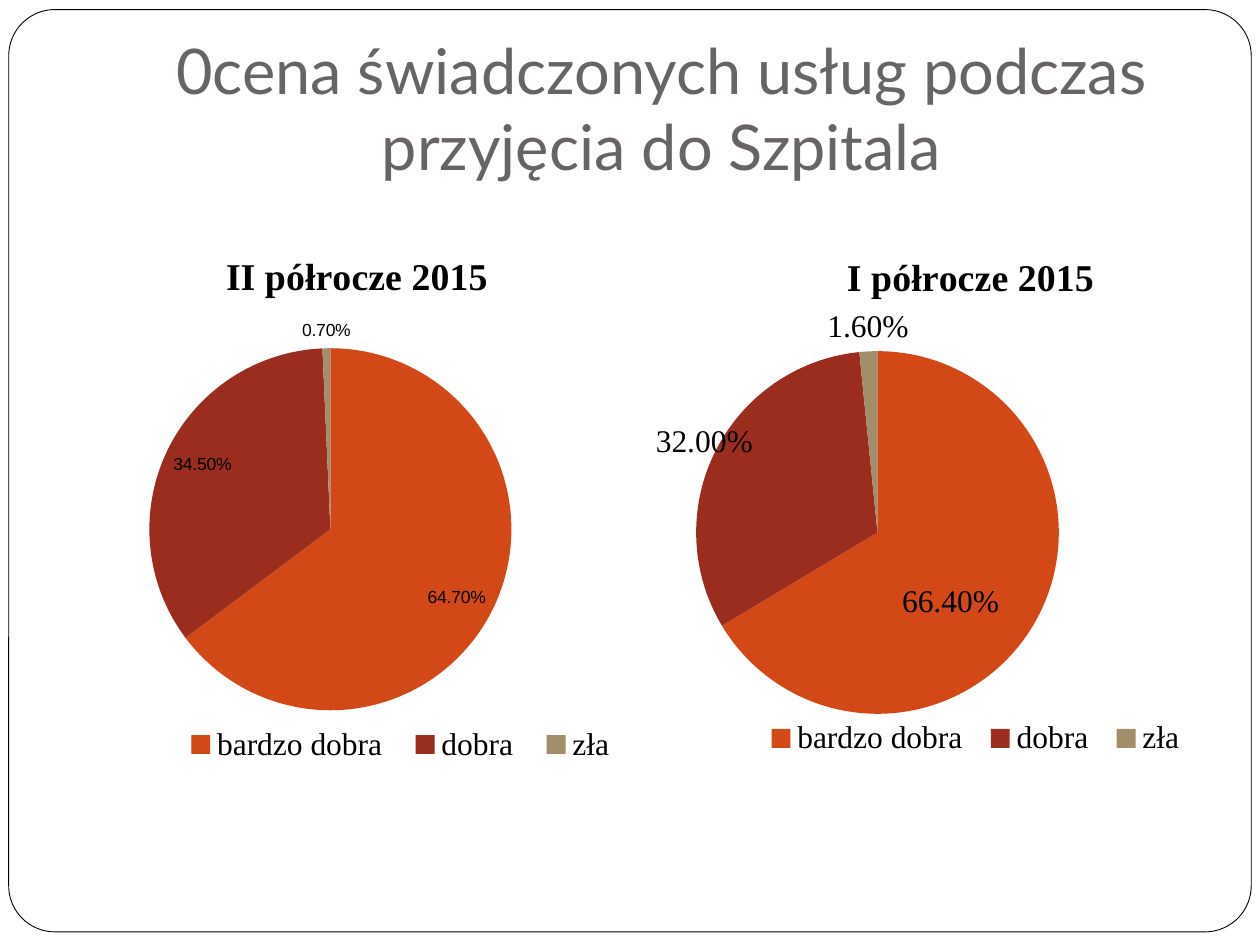
from dataclasses import dataclass

from pptx import Presentation
from pptx.chart.data import CategoryChartData
from pptx.dml.color import RGBColor
from pptx.enum.chart import XL_CHART_TYPE, XL_LABEL_POSITION, XL_LEGEND_POSITION
from pptx.enum.shapes import MSO_SHAPE
from pptx.enum.text import MSO_ANCHOR, PP_ALIGN
from pptx.oxml import parse_xml
from pptx.oxml.ns import nsdecls
from pptx.util import Pt

PIE = XL_CHART_TYPE.PIE
RIGHT = XL_LEGEND_POSITION.RIGHT
MID = XL_LABEL_POSITION.CENTER
IN_END = XL_LABEL_POSITION.INSIDE_END
OUT_END = XL_LABEL_POSITION.OUTSIDE_END
ROUND = MSO_SHAPE.ROUNDED_RECTANGLE
BOTTOM = MSO_ANCHOR.BOTTOM
CENTER = PP_ALIGN.CENTER

HEX = {"paper": "FFFFFF", "ink": "000000", "title": "696464",
       "bardzo dobra": "D34817", "dobra": "9B2D1F", "zła": "A28E6A"}
CATS = ("bardzo dobra", "dobra", "zła")
SERIF = "Times New Roman"


@dataclass
class Label:
    spot: XL_LABEL_POSITION
    shift: tuple = ()


@dataclass
class Pie:
    name: str
    box: tuple
    vals: tuple
    head: tuple
    plot: tuple
    key: tuple
    face: str
    size: int
    labels: tuple


PIES = (
    Pie("II półrocze 2015", (20, 126, 363, 356.5), (0.647, 0.345, 0.007),
        (0.29, 0.04), (0.18, 0.1, 0.57, 0.79), (0.21, 0.8, 0.73, 0.08),
        "Arial", 10, (Label(IN_END), Label(IN_END), Label(OUT_END))),
    Pie("I półrocze 2015", (371.5, 122.5, 329, 356.5), (0.664, 0.32, 0.016),
        (0.33, 0.05), (0.08, 0.1, 0.63, 0.82), (0.18, 0.8, 0.77, 0.08),
        SERIF, 18, (Label(MID, (-0.01, 0.04)), Label(MID, (-0.16, -0.08)),
                    Label(OUT_END))),
)


def color(name: str) -> RGBColor:
    return RGBColor.from_string(HEX[name])


def style(font, face: str, size: float, name: str, bold: bool = False) -> None:
    font.name = face
    font.size = Pt(size)
    font.bold = bold
    font.color.rgb = color(name)


def place(node, spot: int, nums: tuple, edge: bool = True) -> None:
    for old in node.xpath("c:layout"):
        node.remove(old)
    modes = '<c:xMode val="edge"/><c:yMode val="edge"/>' if edge else ""
    parts = "".join(f'<c:{tag} val="{num}"/>' for tag, num in zip("xywh", nums))
    node.insert(spot, parse_xml(
        f'<c:layout {nsdecls("c")}><c:manualLayout>{modes}{parts}'
        '</c:manualLayout></c:layout>'))


def add_frame(slide) -> None:
    frame = slide.shapes.add_shape(ROUND, Pt(5), Pt(5.5), Pt(710), Pt(527))
    frame.adjustments[0] = 0.05
    frame.shadow.inherit = False
    frame.fill.solid()
    frame.fill.fore_color.rgb = color("paper")
    frame.line.color.rgb = color("ink")
    frame.line.width = Pt(0.5)


def add_title(slide, text: str) -> None:
    box = slide.shapes.add_textbox(Pt(72), Pt(21.6), Pt(612), Pt(90))
    frame = box.text_frame
    frame.word_wrap = True
    frame.vertical_anchor = BOTTOM
    frame.margin_bottom = Pt(7.2)
    frame.text = text
    line = frame.paragraphs[0]
    line.alignment = CENTER
    style(line.runs[0].font, "Lato", 36, "title")


def add_pie(slide, pie: Pie) -> None:
    data = CategoryChartData(number_format="0.00%")
    data.categories = CATS
    data.add_series(pie.name, pie.vals)
    box = [Pt(num) for num in pie.box]
    chart = slide.shapes.add_chart(PIE, *box, data).chart
    style(chart.font, SERIF, 18, "ink")

    chart.has_title = True
    title = chart.chart_title
    title.text_frame.text = pie.name
    style(title.text_frame.paragraphs[0].runs[0].font, SERIF, 21.6, "ink", True)
    place(title._element, 1, pie.head)

    chart.has_legend = True
    chart.legend.position = RIGHT
    chart.legend.include_in_layout = False
    style(chart.legend.font, SERIF, 18, "ink")
    place(chart.legend._element, 1, pie.key)

    plot = chart.plots[0]
    plot.vary_by_categories = True
    area = chart._chartSpace.xpath("c:chart/c:plotArea")[0]
    place(area, 0, pie.plot)
    inner = parse_xml(f'<c:layoutTarget {nsdecls("c")} val="inner"/>')
    area.xpath("c:layout/c:manualLayout")[0].insert(0, inner)

    series = plot.series[0]
    for num, (cat, label) in enumerate(zip(CATS, pie.labels)):
        point = series.points[num]
        point.format.fill.solid()
        point.format.fill.fore_color.rgb = color(cat)
        style(point.data_label.font, pie.face, pie.size, "ink")
        point.data_label.position = label.spot
        if label.shift:
            node = series._element.xpath("c:dLbls/c:dLbl")[num]
            place(node, 1, label.shift, edge=False)


def main() -> None:
    deck = Presentation()
    deck.slide_width, deck.slide_height = Pt(720), Pt(540)
    slide = deck.slides.add_slide(deck.slide_layouts[6])
    add_frame(slide)
    add_title(slide, "0cena świadczonych usług podczas przyjęcia do Szpitala")
    for pie in PIES:
        add_pie(slide, pie)
    deck.save("out.pptx")


if __name__ == "__main__":
    main()
